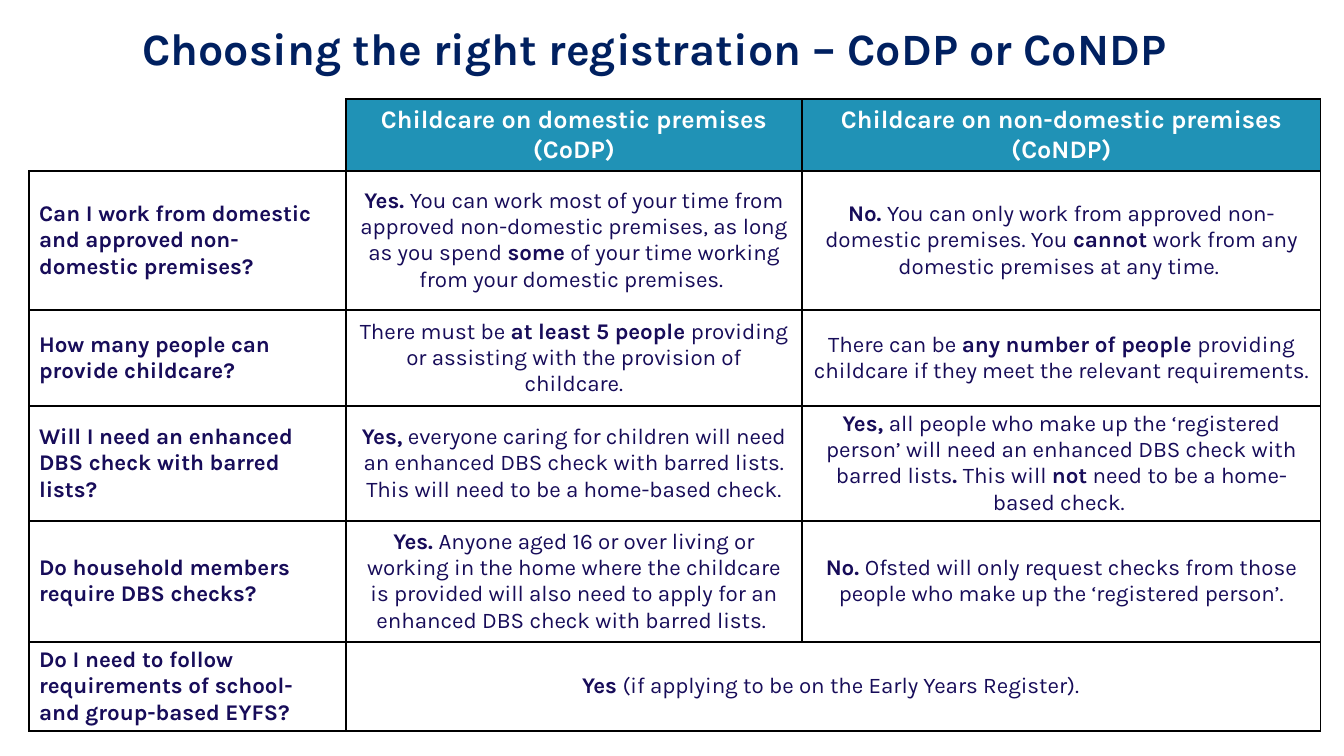
from dataclasses import dataclass

from lxml import etree
from pptx import Presentation
from pptx.dml.color import RGBColor
from pptx.enum.text import MSO_ANCHOR, MSO_AUTO_SIZE, PP_ALIGN
from pptx.oxml.ns import qn
from pptx.util import Pt

LEFT, CENTER = PP_ALIGN.LEFT, PP_ALIGN.CENTER
MIDDLE = MSO_ANCHOR.MIDDLE
NO_AUTOFIT = MSO_AUTO_SIZE.NONE
TITLE_ONLY = 5
EMU_PER_PX = 914400 / 100.8
SLIDE_SIZE = (1344, 756)
TITLE_BOX = (132, 15, 1200, 66)
TABLE_BOX = (29, 99, 1292, 632)
COLUMN_WIDTHS = (317, 456, 519)
ROW_HEIGHTS = (72, 139, 96, 115, 121, 89)


@dataclass(frozen=True)
class Theme:
    """Hold the colours, font and type sizes of the slide."""

    font: str = "Karla"
    title: str = "002060"
    header_fill: str = "2092B6"
    header_text: str = "FFFFFF"
    body_text: str = "170C59"
    border: str = "000000"
    title_size: int = 32
    header_size: int = 18
    body_size: int = 16
    border_width: int = 1


THEME = Theme()
TITLE = "Choosing the right registration – CoDP or CoNDP"
HEADERS = (
    "",
    "**Childcare on domestic premises (CoDP)**",
    "**Childcare on non-domestic premises (CoNDP)**",
)
QUESTIONS = (
    (
        "**Can I work from domestic and approved non-domestic premises?**",
        "**Yes. **You can work most of your time from approved non-domestic premises, "
        "as long as you spend **some** of your time working from your domestic premises. ",
        "**No. **You can only work from approved non-domestic premises. "
        "You **cannot **work from any domestic premises at any time. ",
    ),
    (
        "**How many people can provide childcare?**",
        "There must be **at least 5 people **providing or assisting with the provision of childcare.",
        "There can be **any number of people **providing childcare "
        "if they meet the relevant requirements. ",
    ),
    (
        "**Will I need an enhanced DBS check with barred lists?**",
        "**Yes,** everyone caring for children will need an enhanced DBS check with barred lists. "
        "This will need to be a home-based check.",
        "**Yes, **all people who make up the ‘registered person’ will need an enhanced DBS check "
        "with barred lists**. **This will **not** need to be a home-based check. ",
    ),
    (
        "**Do household members require DBS checks?**",
        "**Yes. **Anyone aged 16 or over living or working in the home where the childcare "
        "is provided will also need to apply for an enhanced DBS check with barred lists. ",
        "**No. **Ofsted will only request checks from those people "
        "who make up the ‘registered person’.",
    ),
    (
        "**Do I need to follow requirements of school- and group-based EYFS?**",
        "**Yes **(if applying to be on the Early Years Register). ",
        "",
    ),
)


def px(length):
    """Convert pixels to EMU."""
    return round(length * EMU_PER_PX)


def add_runs(paragraph, text, size, color):
    """Add text run by run, with bold between double asterisks."""
    for index, part in enumerate(text.split("**")):
        if part:
            run = paragraph.add_run()
            run.text = part
            run.font.name = THEME.font
            run.font.size = Pt(size)
            run.font.bold = index % 2 == 1
            run.font.color.rgb = RGBColor.from_string(color)


def set_borders(cell, sides):
    """Draw the given sides of a cell, in L, R, T, B order."""
    properties = cell._tc.get_or_add_tcPr()
    for side in "LRTB":
        width = str(Pt(THEME.border_width))
        line = etree.SubElement(properties, qn(f"a:ln{side}"), w=width)
        if side in sides:
            fill = etree.SubElement(line, qn("a:solidFill"))
            etree.SubElement(fill, qn("a:srgbClr"), val=THEME.border)
        else:
            etree.SubElement(line, qn("a:noFill"))


def fill_cell(cell, text, is_header, alignment):
    """Format one table cell and write its text."""
    set_borders(cell, "LRTB" if text or not is_header else "RB")
    if is_header and text:
        cell.fill.solid()
        cell.fill.fore_color.rgb = RGBColor.from_string(THEME.header_fill)
    else:
        cell.fill.background()
    cell.vertical_anchor = MIDDLE
    paragraph = cell.text_frame.paragraphs[0]
    paragraph.alignment = alignment
    size = THEME.header_size if is_header else THEME.body_size
    color = THEME.header_text if is_header else THEME.body_text
    add_runs(paragraph, text, size, color)


def add_title(slide, box):
    """Place the title placeholder in the box."""
    title = slide.shapes.title
    title.left, title.top, title.width, title.height = map(px, box)
    frame = title.text_frame
    frame.auto_size = NO_AUTOFIT
    frame.word_wrap = True
    frame.vertical_anchor = MIDDLE
    paragraph = frame.paragraphs[0]
    paragraph.alignment = LEFT
    add_runs(paragraph, f"**{TITLE}**", THEME.title_size, THEME.title)


def add_comparison_table(slide, box):
    """Place the table comparing the two registrations in the box."""
    rows = (HEADERS, *QUESTIONS)
    table = slide.shapes.add_table(len(rows), len(HEADERS), *map(px, box)).table
    table.first_row = table.horz_banding = False
    for column, width in zip(table.columns, COLUMN_WIDTHS):
        column.width = px(width)
    for row, height in zip(table.rows, ROW_HEIGHTS):
        row.height = px(height)
    for row_index, texts in enumerate(rows):
        for column_index, text in enumerate(texts):
            alignment = CENTER if column_index else LEFT
            fill_cell(table.cell(row_index, column_index), text, row_index == 0, alignment)
    last_row = len(rows) - 1
    table.cell(last_row, 1).merge(table.cell(last_row, 2))


def main():
    """Build and save the presentation."""
    presentation = Presentation()
    presentation.slide_width, presentation.slide_height = map(px, SLIDE_SIZE)
    slide = presentation.slides.add_slide(presentation.slide_layouts[TITLE_ONLY])
    add_title(slide, TITLE_BOX)
    add_comparison_table(slide, TABLE_BOX)
    presentation.save("out.pptx")


if __name__ == "__main__":
    main()
